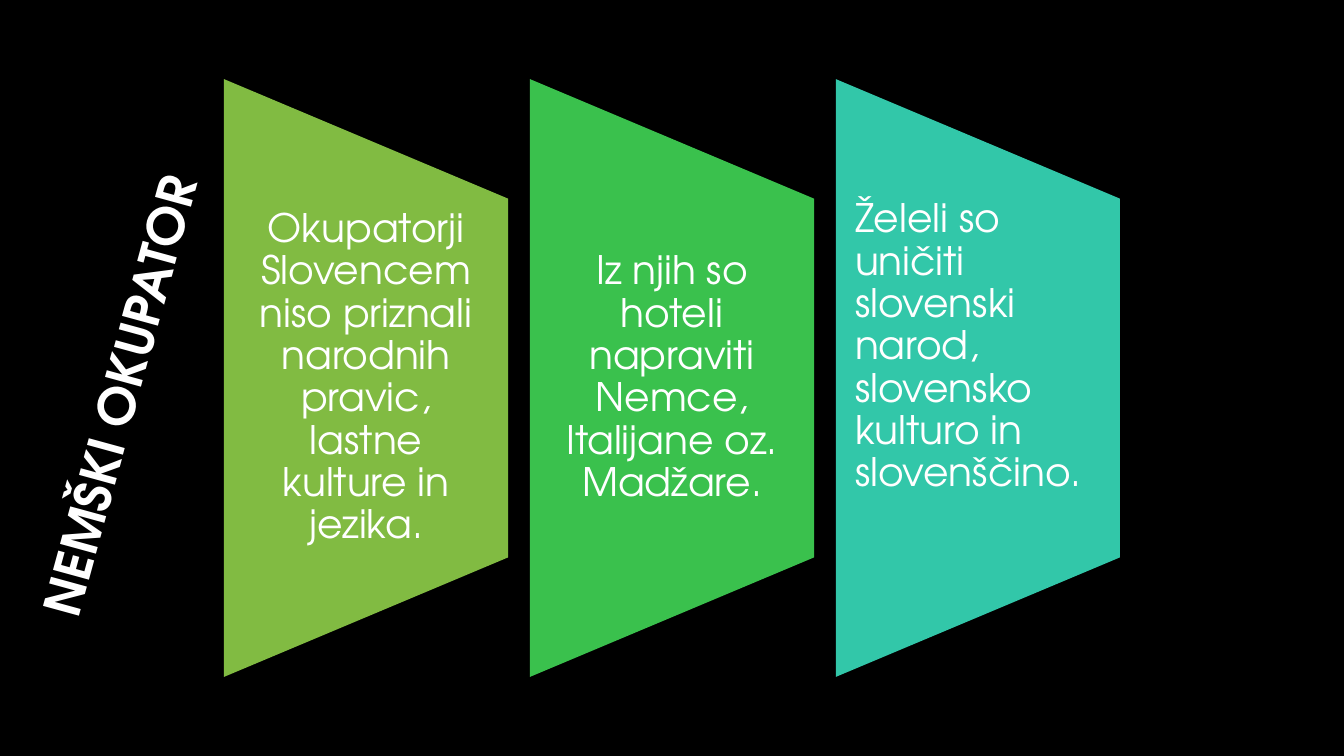
"""Build a slide with three trapezoid panels and a slanted title."""
from dataclasses import dataclass

import pptx
import pptx.dml.color
import pptx.enum.shapes
import pptx.enum.text
import pptx.slide
import pptx.util

Pt = pptx.util.Pt
Align = pptx.enum.text.PP_ALIGN
Anchor = pptx.enum.text.MSO_ANCHOR
AutoSize = pptx.enum.text.MSO_AUTO_SIZE

FONT = "TeX Gyre Adventor"
WHITE = "FFFFFF"
PANEL_LEFT, PANEL_PITCH = 160, 218.5
PANEL_WIDTH, PANEL_HEIGHT = 203, 427
PANEL_MIDDLE = 270
TEXT_HEIGHT = 256


@dataclass(frozen=True)
class Panel:
    text: str
    fill: str
    align: Align = Align.CENTER
    anchor: Anchor = Anchor.MIDDLE


PANELS = [
    Panel("Okupatorji Slovencem niso priznali narodnih pravic, lastne kulture in jezika.", "81BB42"),
    Panel("Iz njih so hoteli napraviti Nemce, Italijane oz. Madžare.", "3AC14D"),
    Panel("Želeli so uničiti slovenski narod, slovensko kulturo in slovenščino.", "32C7A9",
          Align.LEFT, Anchor.TOP),
]


def set_fill(fill: pptx.dml.fill.FillFormat, color: str) -> None:
    fill.solid()
    fill.fore_color.rgb = pptx.dml.color.RGBColor.from_string(color)


def add_text(slide: pptx.slide.Slide, text: str, left: float, top: float, width: float,
             height: float, *, size: float, bold: bool = False, align: Align = Align.LEFT,
             anchor: Anchor = Anchor.TOP, side_inset: float = 7.2, end_inset: float = 3.6,
             line_spacing: float = 1.0, rotation: float = 0,
             auto_size: AutoSize = AutoSize.NONE) -> None:
    shape = slide.shapes.add_textbox(Pt(left), Pt(top), Pt(width), Pt(height))
    shape.rotation = rotation
    frame = shape.text_frame
    frame.word_wrap = True
    frame.auto_size = auto_size
    frame.vertical_anchor = anchor
    frame.margin_left = frame.margin_right = Pt(side_inset)
    frame.margin_top = frame.margin_bottom = Pt(end_inset)
    paragraph = frame.paragraphs[0]
    paragraph.alignment = align
    paragraph.line_spacing = line_spacing
    run = paragraph.add_run()
    run.text = text
    run.font.name = FONT
    run.font.size = Pt(size)
    run.font.bold = bold
    set_fill(run.font.fill, WHITE)


def add_panel(slide: pptx.slide.Slide, panel: Panel, left: float) -> None:
    shape = slide.shapes.add_shape(
        pptx.enum.shapes.MSO_SHAPE.FLOWCHART_MANUAL_OPERATION,
        Pt(left + (PANEL_WIDTH - PANEL_HEIGHT) / 2), Pt(PANEL_MIDDLE - PANEL_WIDTH / 2),
        Pt(PANEL_HEIGHT), Pt(PANEL_WIDTH))
    shape.rotation = 270
    shape.shadow.inherit = False
    set_fill(shape.fill, panel.fill)
    shape.line.fill.background()
    add_text(slide, panel.text, left, PANEL_MIDDLE - TEXT_HEIGHT / 2, PANEL_WIDTH, TEXT_HEIGHT,
             size=28, align=panel.align, anchor=panel.anchor, side_inset=13.8, end_inset=0,
             line_spacing=0.9)


def main() -> None:
    presentation = pptx.Presentation()
    presentation.slide_width, presentation.slide_height = Pt(960), Pt(540)
    slide = presentation.slides.add_slide(presentation.slide_layouts[6])
    set_fill(slide.background.fill, "000000")
    for index, panel in enumerate(PANELS):
        add_panel(slide, panel, PANEL_LEFT + index * PANEL_PITCH)
    add_text(slide, "NEMŠKI OKUPATOR", -122.4, 206.6, 442, 51, size=36, bold=True,
             rotation=285.2, auto_size=AutoSize.SHAPE_TO_FIT_TEXT)
    presentation.save("out.pptx")


if __name__ == "__main__":
    main()
